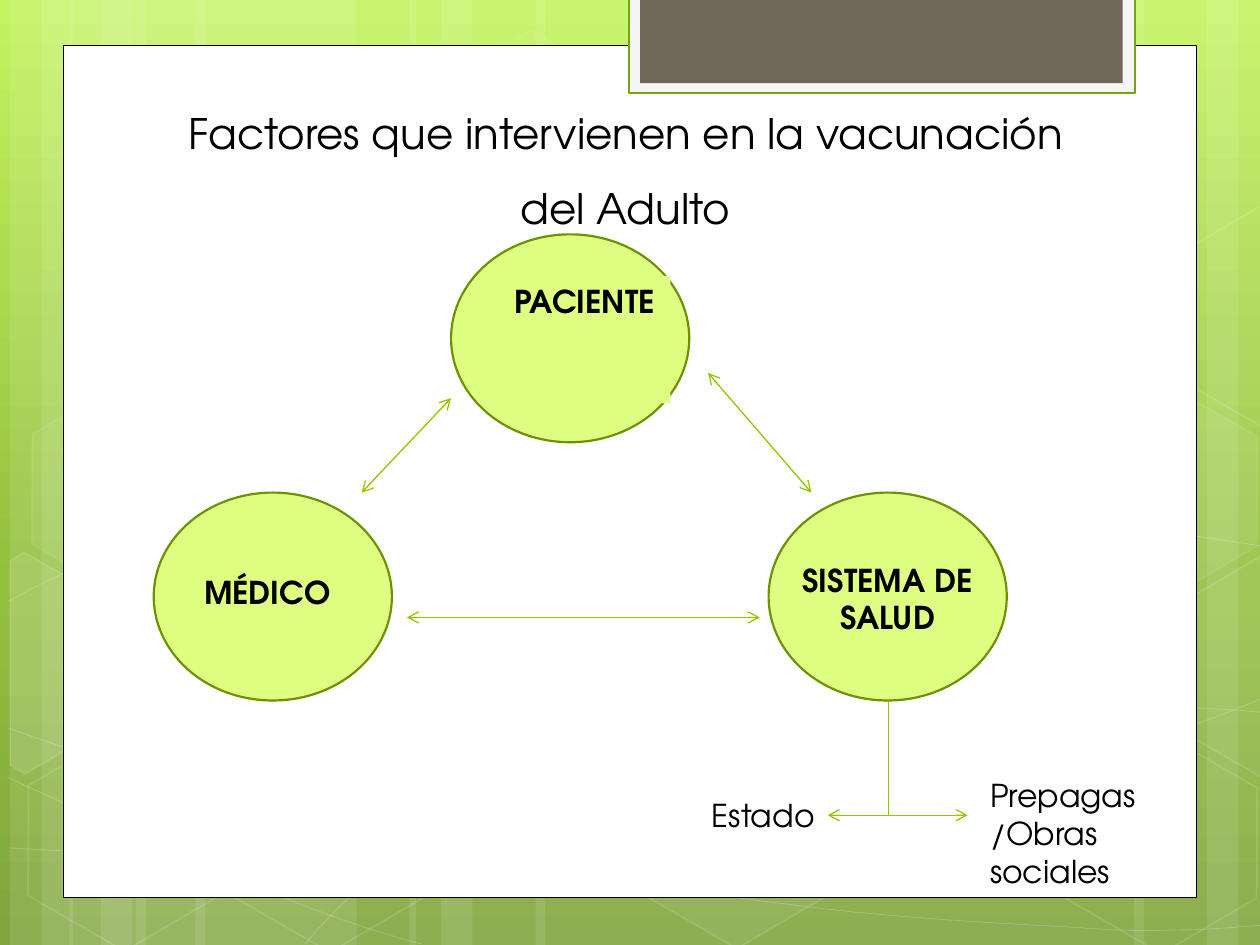
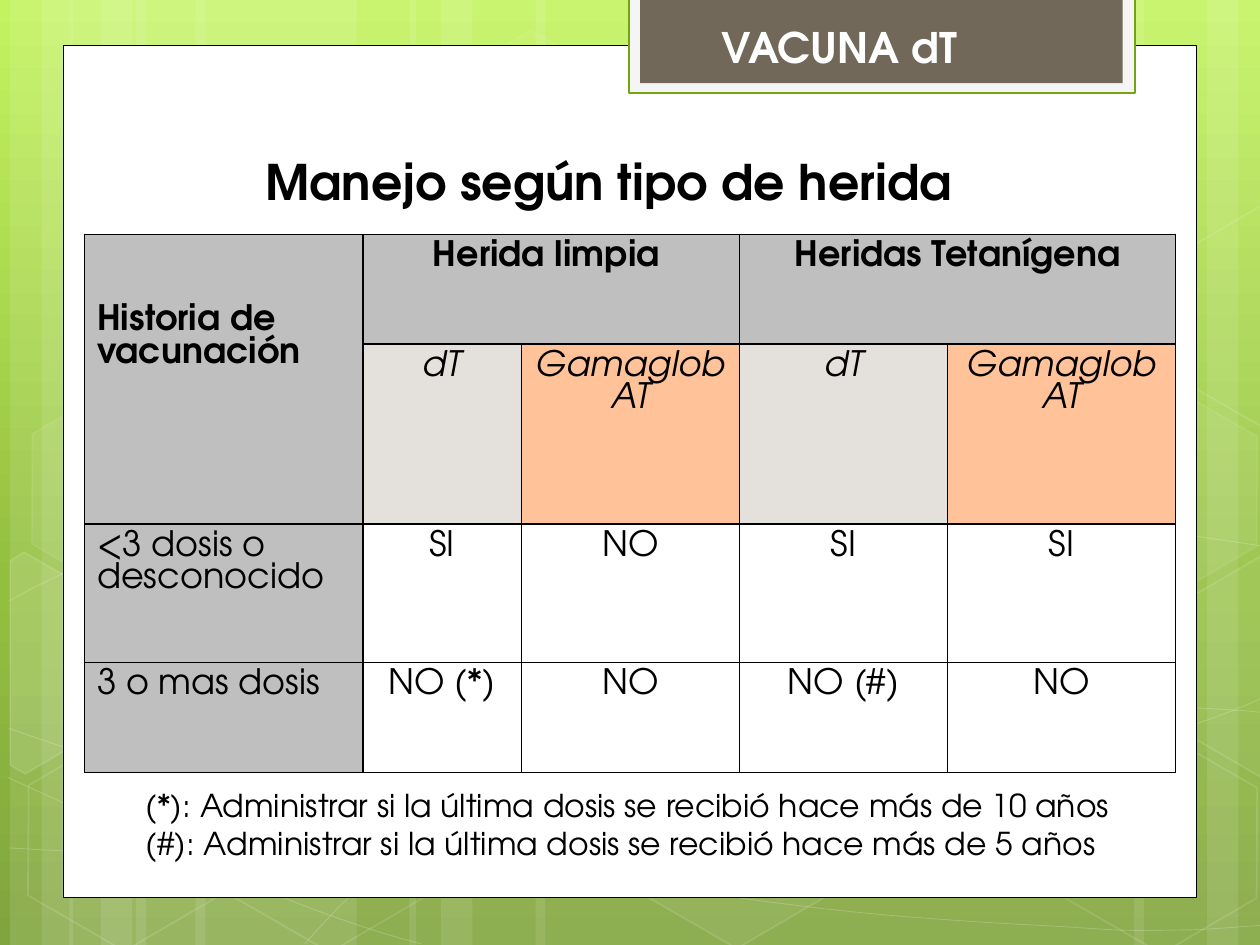
import math
from dataclasses import dataclass

from lxml import etree
from pptx import Presentation, util as u
from pptx.dml.color import RGBColor
from pptx.enum import shapes, text
from pptx.oxml import ns


@dataclass(frozen=True)
class Theme:
    font: str = "TeX Gyre Adventor"
    sky: tuple = ((0, "C3F35F"), (0.62, "93BF3F"), (1, "81A53E"))
    white: str = "FFFFFF"
    black: str = "000000"
    tab_edge: str = "F5F5F5"
    tab_line: str = "74A510"
    tab: str = "71685A"
    circle: str = "DFFF82"
    circle_line: str = "6D9200"
    arrow: str = "94C600"
    header: str = "BFBFBF"
    vaccine: str = "E4E1DD"
    globulin: str = "FFC299"
    heading: int = 28
    title: int = 24
    table: int = 20
    body: int = 18


theme = Theme()
presentation = Presentation()
presentation.slide_width = u.Inches(10)
presentation.slide_height = u.Inches(7.5)
column = presentation.slide_width / 10
row = presentation.slide_height / 7.5


def paint(shape, fill=None, line=None, width=1, fill_alpha=100, line_alpha=100):
    shape.shadow.inherit = False
    shape.line.width = u.Pt(width)
    for target, color, alpha in ((shape.fill, fill, fill_alpha), (shape.line.fill, line, line_alpha)):
        if color is None:
            target.background()
            continue
        target.solid()
        target.fore_color.rgb = RGBColor.from_string(color)
        if alpha < 100:
            node = list(shape.element.spPr.iter(ns.qn("a:srgbClr")))[-1]
            etree.SubElement(node, ns.qn("a:alpha"), val=str(alpha * 1000))


def write(frame, words, size, color=theme.black, bold=False, italic=False, align="LEFT", spacing=1.0):
    frame.word_wrap = True
    frame.vertical_anchor = text.MSO_ANCHOR.TOP
    frame.text = words
    for paragraph in frame.paragraphs:
        paragraph.alignment = text.PP_ALIGN[align]
        paragraph.line_spacing = spacing
        for run in paragraph.runs:
            run.font.name = theme.font
            run.font.size = u.Pt(size)
            run.font.bold = bold
            run.font.italic = italic
            run.font.color.rgb = RGBColor.from_string(color)


bands = [
    (1.08, 1.75), (0.08, 0.5), (0.33, 0.83), (1.55, 1.75), (0.55, 0.5), (0.8, 0.83),
    (7.33, 1.75), (9.58, 0.5), (9, 0.83), (4.25, 3.08), (3.25, 0.5), (3.5, 0.83),
]
waves = [
    [(0.07, 6.73), (0.61, 6.76), (1.15, 6.79), (1.9, 6.78), (2.65, 6.77), (3.58, 6.75), (4.58, 6.65),
     (5.58, 6.55), (7, 6.36), (7.92, 6.17), (8.83, 5.98), (9.77, 5.68), (10.07, 5.51)],
    [(0.07, 4.77), (0.36, 4.61), (0.65, 4.46), (1.21, 4.31), (1.78, 4.16), (2.59, 3.94), (3.47, 3.87),
     (4.36, 3.8), (5.44, 3.79), (6.54, 3.87), (7.64, 3.95), (9.47, 4.26), (10.07, 4.34)],
    [(0.06, 6.17), (1.27, 6.72), (2.47, 7.27), (3.34, 7.49)],
    [(0.07, 5.78), (0.38, 5.89), (0.7, 6), (1.28, 6.16), (1.86, 6.31), (2.73, 6.56), (3.57, 6.73),
     (4.4, 6.9), (5.45, 7.08), (6.28, 7.18), (7.11, 7.29), (8, 7.33), (8.53, 7.36),
     (9.05, 7.4), (9.19, 7.38), (9.45, 7.38), (9.71, 7.37), (9.89, 7.35), (10.07, 7.34)],
    [(2.42, 7.49), (2.6, 7.29), (2.78, 7.09), (3.02, 6.91), (3.26, 6.73), (3.6, 6.53), (3.88, 6.39),
     (4.16, 6.25), (4.33, 6.19), (4.7, 6.09), (5.06, 5.99), (5.73, 5.85), (6.08, 5.78),
     (6.44, 5.71), (6.49, 5.71), (6.8, 5.69), (7.11, 5.66), (7.6, 5.63), (7.94, 5.62),
     (8.29, 5.61), (8.86, 5.62), (8.86, 5.62), (8.86, 5.62), (9.53, 5.62), (9.53, 5.62),
     (9.71, 5.63), (9.88, 5.64), (9.97, 5.65), (10.06, 5.66), (10.03, 5.65), (10.06, 5.66)],
]
hexagons = [
    (3.34, 0.36, 4, 8), (4.97, 5.89, 6, 12), (0.11, 5.91, 0, 12), (0.14, 3.12, 7, 8),
    (1.74, 5.92, 0, 12), (7.53, 4.53, 10, 12), (8.34, 5.93, 0, 12), (8.34, 3.14, 7, 8),
]
cut_hexagons = [
    (10, 0.36, 5.35, [(0.08, 4.45), (0.19, 4.38), (0.96, 4.82), (0.95, 5.7), (0.2, 6.14), (0.08, 6.07)]),
    (4, 9.85, 5.2, [(9.26, 4.85), (10.01, 4.41), (10.09, 4.46), (10.09, 6.13), (10.02, 6.17), (9.26, 5.73)]),
    (0, 9.85, 2.41, [(9.26, 2.07), (10.01, 1.63), (10.1, 1.68), (10.09, 3.35), (10.02, 3.39), (9.26, 2.95)]),
]
panels = [
    (0.5, 0.36, 9, 6.76, theme.white, theme.black, 0.5),
    (4.99, -0.02, 4.02, 0.76, theme.tab_edge, theme.tab_line, 1.25),
    (5.08, -0.02, 3.83, 0.68, theme.tab, None, 1),
]
tilt = 30
cosine, sine = math.cos(math.radians(tilt)), math.sin(math.radians(tilt))

for number in range(2):
    slide = presentation.slides.add_slide(presentation.slide_layouts[6])
    background = slide.background.fill
    background.gradient()
    background.gradient_angle = 270
    stop_list = next(slide.element.iter(ns.qn("a:gsLst")))
    for stop in list(stop_list):
        stop_list.remove(stop)
    for position, color in theme.sky:
        stop = etree.SubElement(stop_list, ns.qn("a:gs"), pos=str(int(position * 100000)))
        etree.SubElement(stop, ns.qn("a:srgbClr"), val=color)

    for left, width in bands:
        band = slide.shapes.add_shape(
            shapes.MSO_SHAPE.RECTANGLE, int(left * column), 0, int(width * column), presentation.slide_height)
        paint(band, theme.white, fill_alpha=10)

    for points in waves:
        builder = slide.shapes.build_freeform(int(points[0][0] * column), int(points[0][1] * row))
        builder.add_line_segments([(x * column, y * row) for x, y in points[1:]], close=False)
        wave = builder.convert_to_shape()
        outline = next(wave.element.iter(ns.qn("a:path")))
        segments = outline.findall(ns.qn("a:lnTo"))
        for start in range(0, len(segments), 3):
            curve = etree.SubElement(outline, ns.qn("a:cubicBezTo"))
            for segment in segments[start:start + 3]:
                curve.append(segment[0])
                outline.remove(segment)
        paint(wave, line=theme.white, width=0.5, line_alpha=20)

    for left, top, fill_alpha, line_alpha in hexagons:
        hexagon = slide.shapes.add_shape(
            shapes.MSO_SHAPE.HEXAGON, int(left * column), int(top * row), int(1.75 * column), int(1.52 * row))
        hexagon.adjustments[0] = 0.285
        hexagon.rotation = tilt
        paint(hexagon, theme.white if fill_alpha else None, theme.white, 1, fill_alpha, line_alpha)

    for fill_alpha, center_x, center_y, corners in cut_hexagons:
        offsets = [(x - center_x, y - center_y) for x, y in corners]
        upright = [(int((center_x + x * cosine + y * sine) * column),
                    int((center_y - x * sine + y * cosine) * row)) for x, y in offsets]
        builder = slide.shapes.build_freeform(*upright[0])
        builder.add_line_segments(upright[1:], close=True)
        cut_hexagon = builder.convert_to_shape()
        cut_hexagon.rotation = tilt
        paint(cut_hexagon, theme.white if fill_alpha else None, theme.white, 1, fill_alpha, 12)

    for left, top, width, height, fill, line, weight in panels:
        panel = slide.shapes.add_shape(
            shapes.MSO_SHAPE.RECTANGLE, int(left * column), int(top * row), int(width * column), int(height * row))
        paint(panel, fill, line, weight)

factors_slide, wounds_slide = presentation.slides

circles = [
    (1.22, 3.91, "MÉDICO", (1.38, 4.5, 1.5, 0.4), "LEFT"),
    (3.58, 1.86, "PACIENTE", (3.84, 2.19, 1.48, 1.01), "LEFT"),
    (6.1, 3.91, "SISTEMA DE SALUD", (6.26, 4.4, 1.57, 0.71), "CENTER"),
]
text_boxes = [
    (factors_slide, (1.38, 0.6, 7.17, 1.31), "Factores que intervienen en la vacunación del Adulto",
     dict(size=theme.title, align="CENTER", spacing=1.5)),
    (factors_slide, (7.76, 6.11, 1.97, 0.71), "Prepagas /Obras sociales", dict(size=theme.body)),
    (factors_slide, (5.55, 6.27, 1.31, 0.71), "Estado", dict(size=theme.body)),
    (wounds_slide, (0.83, 0.92, 8.11, 0.72), "Manejo según tipo de herida ",
     dict(size=theme.heading, bold=True, align="CENTER", spacing=1.5)),
    (wounds_slide, (1.06, 6.19, 7.87, 0.71),
     "(*): Administrar si la última dosis se recibió hace más de 10 años\n"
     "(#): Administrar si la última dosis se recibió hace más de 5 años", dict(size=theme.body)),
    (wounds_slide, (5.63, 0.12, 4.02, 0.5), "VACUNA dT",
     dict(size=theme.title, color=theme.white, bold=True)),
]
for slide, (left, top, width, height), words, style in text_boxes:
    box = slide.shapes.add_textbox(int(left * column), int(top * row), int(width * column), int(height * row))
    write(box.text_frame, words, **style)

for left, top, words, (label_left, label_top, label_width, label_height), align in circles:
    circle = factors_slide.shapes.add_shape(
        shapes.MSO_SHAPE.FLOWCHART_CONNECTOR,
        int(left * column), int(top * row), int(1.89 * column), int(1.65 * row))
    paint(circle, theme.circle, theme.circle_line, 1.25)
    label = factors_slide.shapes.add_shape(
        shapes.MSO_SHAPE.RECTANGLE, int(label_left * column), int(label_top * row),
        int(label_width * column), int(label_height * row))
    paint(label, theme.circle)
    write(label.text_frame, words, theme.body, bold=True, align=align)
    if align == "LEFT":
        label.text_frame.margin_left = int(0.24 * column)
        label.text_frame.margin_right = int(0.05 * column)

arrows = [
    (2.87, 3.91, 3.58, 3.16, True), (6.44, 3.91, 5.62, 2.96, True), (3.23, 4.9, 6.03, 4.9, True),
    (7.05, 5.56, 7.05, 6.47, False), (6.57, 6.47, 7.68, 6.47, True),
]
for start_x, start_y, end_x, end_y, has_heads in arrows:
    arrow = factors_slide.shapes.add_connector(
        shapes.MSO_CONNECTOR.STRAIGHT,
        int(start_x * column), int(start_y * row), int(end_x * column), int(end_y * row))
    arrow.line.width = u.Pt(0.75)
    arrow.line.color.rgb = RGBColor.from_string(theme.arrow)
    if has_heads:
        for end in ("a:headEnd", "a:tailEnd"):
            etree.SubElement(arrow.element.spPr.find(ns.qn("a:ln")), ns.qn(end), type="arrow")
    etree.SubElement(arrow.element.spPr, ns.qn("a:effectLst"))

column_widths = [2.21, 1.26, 1.73, 1.65, 1.81]
row_heights = [0.87, 1.43, 1.1, 0.87]
cell_words = [
    ["Historia de vacunación", "Herida limpia ", "", "Heridas Tetanígena", ""],
    ["", "dT", "GamaglobAT", "dT", "GamaglobAT"],
    ["<3 dosis o desconocido", "SI", "NO", "SI", "SI"],
    ["3 o mas dosis", "NO (*)", "NO", "NO (#)", "NO"],
]
drug_fills = {"dT": theme.vaccine, "GamaglobAT": theme.globulin}
table = wounds_slide.shapes.add_table(
    4, 5, int(0.67 * column), int(1.86 * row),
    int(sum(column_widths) * column), int(sum(row_heights) * row)).table
for index, width in enumerate(column_widths):
    table.columns[index].width = int(width * column)
for index, height in enumerate(row_heights):
    table.rows[index].height = int(height * row)
table.cell(0, 0).merge(table.cell(1, 0))
table.cell(0, 1).merge(table.cell(0, 2))
table.cell(0, 3).merge(table.cell(0, 4))

for row_index, words_in_row in enumerate(cell_words):
    for column_index, words in enumerate(words_in_row):
        cell = table.cell(row_index, column_index)
        is_header = row_index == 0 or column_index == 0
        cell.fill.solid()
        cell.fill.fore_color.rgb = RGBColor.from_string(
            theme.header if is_header else drug_fills.get(words, theme.white))
        properties = cell._tc.get_or_add_tcPr()
        for position, side in enumerate(("a:lnL", "a:lnR", "a:lnT", "a:lnB")):
            border = etree.Element(ns.qn(side), w=str(u.Pt(1)))
            border_fill = etree.SubElement(border, ns.qn("a:solidFill"))
            etree.SubElement(border_fill, ns.qn("a:srgbClr"), val=theme.black)
            properties.insert(position, border)
        if words:
            write(cell.text_frame, words, theme.table, bold=row_index == 0, italic=row_index == 1,
                  align="CENTER" if column_index else "LEFT")
table.cell(0, 0).margin_top = int(0.56 * row)

presentation.save("out.pptx")
